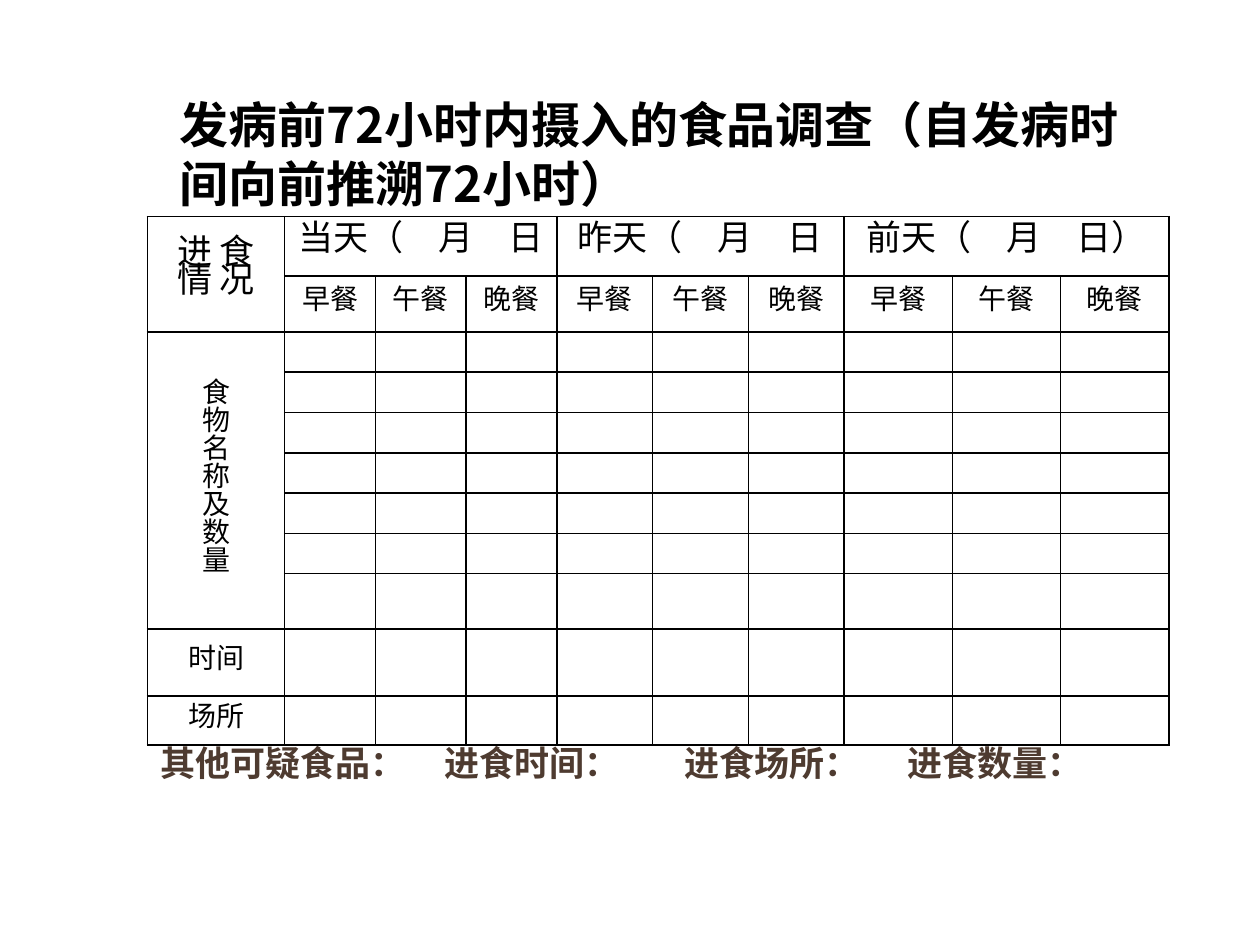
from lxml.etree import SubElement
from pptx import Presentation
from pptx.dml.color import RGBColor
from pptx.enum.text import MSO_ANCHOR, MSO_AUTO_SIZE, PP_ALIGN
from pptx.oxml.ns import qn
from pptx.util import Inches, Pt

BLACK = RGBColor(0x00, 0x00, 0x00)
BROWN = RGBColor(0x4E, 0x3B, 0x30)

COLUMN_WIDTHS = [1.09] + [0.72] * 3 + [0.76] * 3 + [0.86] * 3
ROW_HEIGHTS = [0.47, 0.44] + [0.32] * 6 + [0.44, 0.53, 0.39]
DAYS = ["当天（　月　日", "昨天（　月　日", "前天（　月　日）"]
MEALS = ["早餐", "午餐", "晚餐"]
FOOD_ROWS = 7


def style_font(font, name, size, color, bold=False):
    font.name = name
    font.size = Pt(size)
    font.color.rgb = color
    font.bold = bold


def add_heading(page, left, top, width, height):
    box = page.shapes.add_textbox(left, top, width, height)
    frame = box.text_frame
    frame.word_wrap = True
    para = frame.paragraphs[0]
    para.text = "发病前72小时内摄入的食品调查（自发病时间向前推溯72小时）"
    para.line_spacing = Pt(33.6)
    style_font(para.font, "Noto Sans CJK SC", 28, BLACK, bold=True)


def add_borders(cell):
    properties = cell._tc.get_or_add_tcPr()
    for position, side in enumerate(("a:lnL", "a:lnR", "a:lnT", "a:lnB")):
        line = properties.makeelement(qn(side), {"w": str(Pt(1))})
        fill = SubElement(line, qn("a:solidFill"))
        SubElement(fill, qn("a:srgbClr"), val=str(BLACK))
        properties.insert(position, line)


def format_cell(cell, size):
    cell.fill.background()
    cell.vertical_anchor = MSO_ANCHOR.MIDDLE
    cell.margin_left = cell.margin_right = Inches(0.07)
    cell.margin_top = cell.margin_bottom = 0
    for para in cell.text_frame.paragraphs:
        para.alignment = PP_ALIGN.CENTER
        para.line_spacing = Pt(16)
        style_font(para.font, "Times New Roman", size, BLACK)
    add_borders(cell)


def add_meal_table(page, left, top, width, height):
    table = page.shapes.add_table(
        len(ROW_HEIGHTS), len(COLUMN_WIDTHS), left, top, width, height).table
    table.first_row = table.horz_banding = False
    for column, inches in zip(table.columns, COLUMN_WIDTHS):
        column.width = Inches(inches)
    for row, inches in zip(table.rows, ROW_HEIGHTS):
        row.height = Inches(inches)

    # Row labels
    food_end = 1 + FOOD_ROWS
    table.cell(0, 0).merge(table.cell(1, 0))
    table.cell(2, 0).merge(table.cell(food_end, 0))
    labels = {0: "进 食\n情 况", 2: "\n".join("食物名称及数量"),
              food_end + 1: "时间", food_end + 2: "场所"}
    for row, label in labels.items():
        table.cell(row, 0).text = label

    # Three meals under each day
    for index, day in enumerate(DAYS):
        first = 1 + index * len(MEALS)
        table.cell(0, first).merge(table.cell(0, first + len(MEALS) - 1))
        table.cell(0, first).text = day
        for offset, meal in enumerate(MEALS):
            table.cell(1, first + offset).text = meal

    for row in range(len(ROW_HEIGHTS)):
        for column in range(len(COLUMN_WIDTHS)):
            format_cell(table.cell(row, column), 20 if row == 0 else 16)


def place_title(page, left, top, width, height):
    title = page.shapes.title
    title.left, title.top, title.width, title.height = left, top, width, height
    frame = title.text_frame
    frame.auto_size = MSO_AUTO_SIZE.NONE
    frame.word_wrap = True
    frame.vertical_anchor = MSO_ANCHOR.MIDDLE
    para = frame.paragraphs[0]
    para.text = "其他可疑食品：\t进食时间：\t进食场所：\t进食数量："
    para.alignment = PP_ALIGN.LEFT
    style_font(para.font, "Cabin", 20, BROWN, bold=True)

    # Tab stops, placed before the default run properties
    properties = para._p.get_or_add_pPr()
    stops = properties.makeelement(qn("a:tabLst"), {})
    for inches in (2.26, 4.16, 5.93):
        SubElement(stops, qn("a:tab"), pos=str(Inches(inches)), algn="l")
    properties.find(qn("a:defRPr")).addprevious(stops)


def main():
    deck = Presentation()
    deck.slide_width, deck.slide_height = Inches(10), Inches(7.5)
    page = deck.slides.add_slide(deck.slide_layouts.get_by_name("Title Only"))
    add_meal_table(page, Inches(1.17), Inches(1.72), Inches(8.12), Inches(4.19))
    place_title(page, Inches(1.17), Inches(5.78), Inches(8.12), Inches(0.55))
    add_heading(page, Inches(1.33), Inches(0.7), Inches(7.81), Inches(1.04))
    deck.save("out.pptx")


if __name__ == "__main__":
    main()
